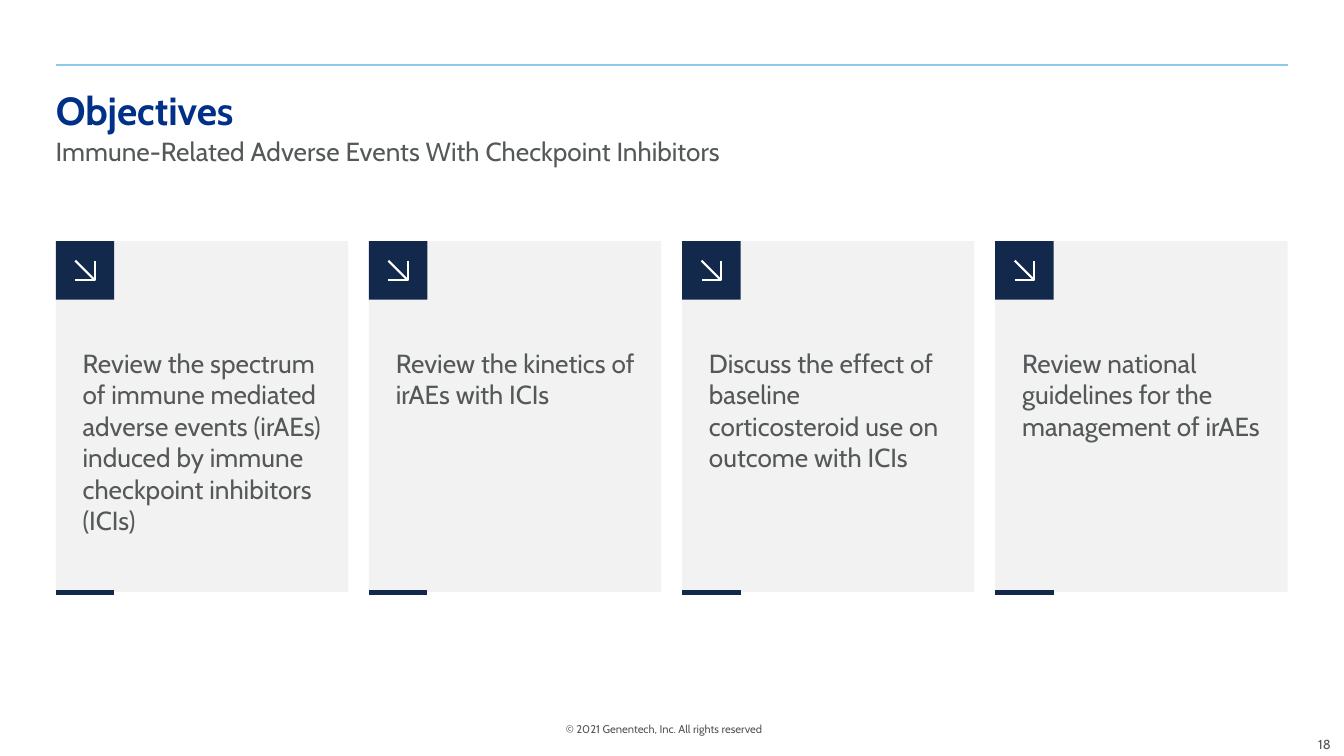
from lxml.etree import SubElement
from pptx import Presentation
from pptx.dml.color import RGBColor
from pptx.enum.shapes import MSO_CONNECTOR, MSO_SHAPE
from pptx.enum.text import MSO_ANCHOR, MSO_AUTO_SIZE, PP_ALIGN
from pptx.oxml.ns import qn
from pptx.util import Pt

PX = 4572  # 200 px to the inch
COLORS = {
    "title": "003087",
    "text": "545859",
    "navy": "13294B",
    "card": "F2F2F2",
    "rule": "8DC8E8",
    "white": "FFFFFF",
}
MARGIN, CONTENT_WIDTH = 83, 1834
CARD_TOP, CARD_WIDTH, CARD_HEIGHT, CARD_PITCH = 359, 435, 522, 466
TILE = 87
OBJECTIVES = [
    "Review the spectrum of immune mediated adverse events (irAEs) induced by immune checkpoint inhibitors (ICIs)",
    "Review the kinetics of irAEs with ICIs",
    "Discuss the effect of baseline corticosteroid use on outcome with ICIs",
    "Review national guidelines for the management of irAEs",
]


def write_text(shape, text, size, color="text", bold=False, align=PP_ALIGN.LEFT,
               anchor=MSO_ANCHOR.TOP, insets=(0, 0, 0, 0), spacing=1.0):
    """Fill a shape with one paragraph; insets are left, top, right, bottom in px."""
    frame = shape.text_frame
    frame.text = text
    left, top, right, bottom = (inset * PX for inset in insets)
    frame_format = {
        "word_wrap": True, "auto_size": MSO_AUTO_SIZE.NONE, "vertical_anchor": anchor,
        "margin_left": left, "margin_top": top, "margin_right": right, "margin_bottom": bottom,
    }
    for name, value in frame_format.items():
        setattr(frame, name, value)
    paragraph = frame.paragraphs[0]
    paragraph.alignment = align
    paragraph.line_spacing = spacing
    font = paragraph.runs[0].font
    for name, value in {"name": "Cabin", "size": Pt(size), "bold": bold}.items():
        setattr(font, name, value)
    font.color.rgb = RGBColor.from_string(COLORS[color])


def add_line(shapes, start, end, color, width):
    line = shapes.add_connector(
        MSO_CONNECTOR.STRAIGHT, *(value * PX for value in (*start, *end)))
    line.line.color.rgb = RGBColor.from_string(COLORS[color])
    line.line.width = Pt(width)
    SubElement(line._element.spPr, qn("a:effectLst"))


presentation = Presentation()
presentation.slide_width = 2000 * PX
presentation.slide_height = 1125 * PX
slide = presentation.slides.add_slide(presentation.slide_layouts[5])
shapes = slide.shapes

# Header rule and title
add_line(shapes, (MARGIN, 97), (MARGIN + CONTENT_WIDTH, 97), "rule", 1)
title = shapes.title
title_format = {"left": MARGIN, "top": 128, "width": CONTENT_WIDTH, "height": 142}
for name, value in title_format.items():
    setattr(title, name, value * PX)
write_text(title, "Objectives", 21, "title", bold=True)

# Subtitle, copyright line and page number
text_boxes = [
    ((MARGIN, 207, CONTENT_WIDTH, 42),
     "Immune-Related Adverse Events With Checkpoint Inhibitors", 14,
     {"anchor": MSO_ANCHOR.MIDDLE, "spacing": 0.9}),
    ((828, 1075, 320, 20), "© 2021 Genentech, Inc. All rights reserved", 6,
     {"align": PP_ALIGN.CENTER}),
    ((1918, 1090, 82, 35), "18", 7,
     {"align": PP_ALIGN.RIGHT, "anchor": MSO_ANCHOR.MIDDLE, "insets": (20, 10, 20, 10)}),
]
for box, text, size, text_format in text_boxes:
    text_box = shapes.add_textbox(*(value * PX for value in box))
    write_text(text_box, text, size, **text_format)

# Objective cards
for index, objective in enumerate(OBJECTIVES):
    left = MARGIN + index * CARD_PITCH
    for width, height, color in ((CARD_WIDTH, CARD_HEIGHT, "card"), (TILE, TILE, "navy")):
        rectangle = shapes.add_shape(
            MSO_SHAPE.RECTANGLE, left * PX, CARD_TOP * PX, width * PX, height * PX)
        rectangle.shadow.inherit = False
        rectangle.fill.solid()
        rectangle.fill.fore_color.rgb = RGBColor.from_string(COLORS[color])
        rectangle.line.fill.background()
        if color == "card":
            write_text(rectangle, objective, 14, insets=(40, 158, 38, 0))

    accent_y = CARD_TOP + CARD_HEIGHT + 1
    add_line(shapes, (left, accent_y), (left + TILE, accent_y), "navy", 2.5)

    arrow = shapes.add_group_shape()
    near_x, far_x = left + 29, left + 58
    near_y, far_y = CARD_TOP + 29, CARD_TOP + 58
    add_line(arrow.shapes, (far_x, far_y), (near_x, near_y), "white", 1.13)
    builder = arrow.shapes.build_freeform(far_x, near_y, scale=PX)
    builder.add_line_segments([(far_x, far_y), (near_x, far_y)], close=False)
    arrow_head = builder.convert_to_shape()
    arrow_head.shadow.inherit = False
    arrow_head.fill.background()
    arrow_head.line.color.rgb = RGBColor.from_string(COLORS["white"])
    arrow_head.line.width = Pt(1.13)

presentation.save("out.pptx")
